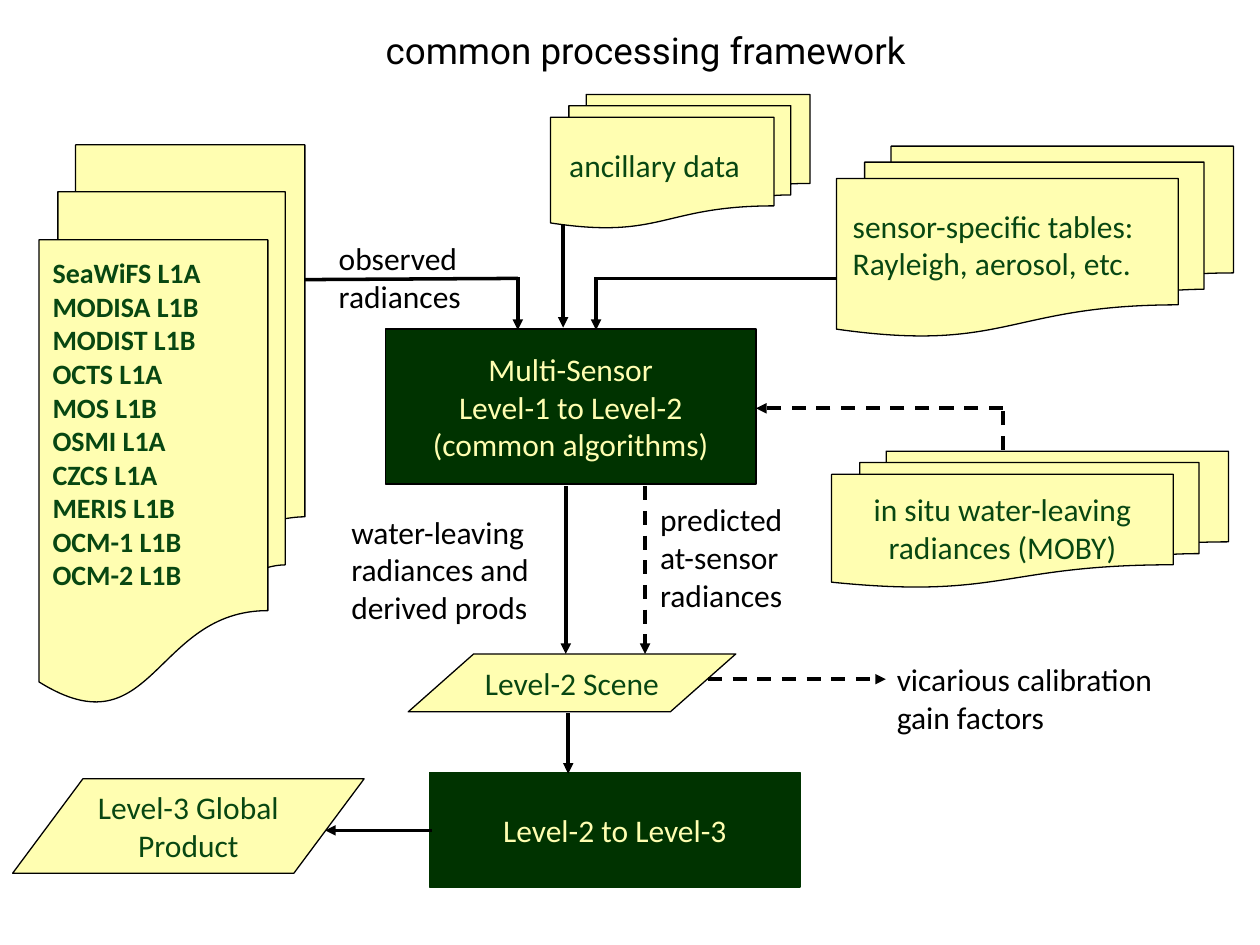
from dataclasses import dataclass

from pptx import Presentation
from pptx.dml.color import RGBColor
from pptx.enum.dml import MSO_LINE
from pptx.enum.shapes import MSO_CONNECTOR, MSO_SHAPE
from pptx.enum.text import MSO_ANCHOR, MSO_AUTO_SIZE, PP_ALIGN
from pptx.oxml.ns import qn
from pptx.slide import Slide
from pptx.text.text import TextFrame
from pptx.util import Pt

DOCS = MSO_SHAPE.FLOWCHART_MULTIDOCUMENT
DATA = MSO_SHAPE.FLOWCHART_DATA
RECT = MSO_SHAPE.RECTANGLE
STRAIGHT = MSO_CONNECTOR.STRAIGHT
DASH = MSO_LINE.DASH
LEFT, CENTER = PP_ALIGN.LEFT, PP_ALIGN.CENTER
TOP, MIDDLE = MSO_ANCHOR.TOP, MSO_ANCHOR.MIDDLE
FIT, FIXED = MSO_AUTO_SIZE.SHAPE_TO_FIT_TEXT, MSO_AUTO_SIZE.NONE

BLACK, CREAM, FOREST, GREEN = "000000", "FFFEB1", "003300", "084712"
BODY = {"name": "Calibri", "size": Pt(18), "bold": False}
SENSOR = {"name": "Calibri", "size": Pt(16), "bold": True}
TITLE = {"name": "Roboto", "size": Pt(21), "bold": False}


@dataclass
class Box:
    kind: MSO_SHAPE
    at: tuple
    text: str = ""
    fill: str = CREAM
    line: str = BLACK
    color: str = GREEN


@dataclass
class Label:
    at: tuple
    text: str
    color: str = BLACK
    font: dict = None
    align: PP_ALIGN = LEFT
    wrap: bool = False


@dataclass
class Flow:
    start: tuple
    end: tuple
    arrow: bool = True
    dashed: bool = False


BOXES = [
    Box(DOCS, (478, 83.5, 226.8, 108.7)),
    Box(DOCS, (22.3, 82.8, 151.9, 319)),
    Box(RECT, (220.3, 188, 211.7, 88.6),
        "Multi-Sensor\nLevel-1 to Level-2\n(common algorithms)", FOREST, BLACK, CREAM),
    Box(RECT, (245.5, 441.4, 211.7, 65.5), "Level-2 to Level-3", FOREST, FOREST, CREAM),
    Box(DATA, (233.3, 373.7, 187.2, 33.1), "Level-2 Scene"),
    Box(DOCS, (314.6, 54, 148.3, 76.3)),
    Box(DATA, (7.2, 445, 200.9, 54), "Level-3 Global\nProduct"),
    Box(DOCS, (475.2, 257.8, 226.8, 77.8), "in situ water-leaving\nradiances (MOBY)"),
]

OBSERVED = Flow((172.1, 159.8), (295.9, 159.1), arrow=False)
FLOWS = [
    Flow((295.9, 158.4), (295.9, 188.6)),
    Flow((478, 159.1), (340.6, 159.1), arrow=False),
    Flow((340.6, 158.4), (340.6, 188.6)),
    Flow((324.7, 407.5), (324.7, 442.1)),
    Flow((323.3, 277.9), (323.3, 373.7)),
    Flow((247, 474.5), (185.8, 474.5)),
    Flow((321.8, 128.2), (321.8, 187.2)),
    Flow((368.6, 277.9), (368.6, 373.7), dashed=True),
    Flow((573.1, 257), (573.1, 233.3), arrow=False, dashed=True),
    Flow((573.1, 233.3), (432, 233.3), dashed=True),
    Flow((404.6, 388.1), (506.2, 388.1), dashed=True),
]

LABELS = [
    Label((36, 12.2, 666, 32.4), "common processing framework",
          font=TITLE, align=CENTER, wrap=True),
    Label((23, 142.6, 117.4, 199.4),
          "SeaWiFS L1A\nMODISA L1B\nMODIST L1B\nOCTS L1A\nMOS L1B\n"
          "OSMI L1A\nCZCS L1A\nMERIS L1B\nOCM-1 L1B\nOCM-2 L1B", GREEN, SENSOR),
    Label((480.2, 114.5, 193, 50.4),
          "sensor-specific tables:\nRayleigh, aerosol, etc.", GREEN),
    Label((186.5, 133.2, 93.6, 50.4), "observed\nradiances"),
    Label((318.2, 79.9, 120.2, 28.8), "ancillary data", GREEN),
    Label((193.7, 289.4, 132.5, 72), "water-leaving\nradiances and\nderived prods"),
    Label((505.4, 373.7, 172.8, 50.4), "vicarious calibration\ngain factors"),
    Label((370.1, 282.2, 92.2, 72), "predicted\nat-sensor\nradiances"),
]


def rgb(code: str) -> RGBColor:
    """Turn a hex string into a colour."""
    return RGBColor.from_string(code)


def write(tf: TextFrame, text: str, font: dict, color: str, align: PP_ALIGN, frame: dict) -> None:
    """Fill a text frame with one paragraph per line."""
    for name, value in frame.items():
        setattr(tf, name, value)
    for i, line in enumerate(text.split("\n")):
        p = tf.add_paragraph() if i else tf.paragraphs[0]
        p.alignment = align
        r = p.add_run()
        r.text = line
        for name, value in font.items():
            setattr(r.font, name, value)
        r.font.color.rgb = rgb(color)


def draw_box(s: Slide, box: Box) -> None:
    """Draw a filled flowchart shape with its centred text."""
    sp = s.shapes.add_shape(box.kind, *map(Pt, box.at))
    sp.shadow.inherit = False
    sp.fill.solid()
    sp.fill.fore_color.rgb = rgb(box.fill)
    sp.line.color.rgb = rgb(box.line)
    sp.line.width = Pt(0.75)
    if box.text:
        frame = {"word_wrap": False, "auto_size": FIXED, "vertical_anchor": MIDDLE}
        write(sp.text_frame, box.text, BODY, box.color, CENTER, frame)


def draw_label(s: Slide, label: Label) -> None:
    """Draw a text box."""
    sp = s.shapes.add_textbox(*map(Pt, label.at))
    frame = {"word_wrap": label.wrap, "auto_size": FIT, "vertical_anchor": TOP}
    write(sp.text_frame, label.text, label.font or BODY, label.color, label.align, frame)


def draw_flow(s: Slide, flow: Flow) -> None:
    """Draw a straight line, with an arrowhead at its end if asked."""
    sp = s.shapes.add_connector(STRAIGHT, *map(Pt, flow.start + flow.end))
    sp.line.color.rgb = rgb(BLACK)
    sp.line.width = Pt(2)
    if flow.dashed:
        sp.line.dash_style = DASH
    props = sp.line._get_or_add_ln()
    if flow.arrow:
        tail = props.makeelement(qn("a:tailEnd"), {"type": "triangle"})
        props.append(tail)
    props.addnext(props.makeelement(qn("a:effectLst"), {}))


def main() -> None:
    """Build the processing framework slide."""
    prs = Presentation()
    prs.slide_width, prs.slide_height = Pt(720), Pt(540)
    s = prs.slides.add_slide(prs.slide_layouts[6])
    draw_flow(s, OBSERVED)
    for box in BOXES:
        draw_box(s, box)
    for flow in FLOWS:
        draw_flow(s, flow)
    for label in LABELS:
        draw_label(s, label)
    prs.save("out.pptx")


if __name__ == "__main__":
    main()
